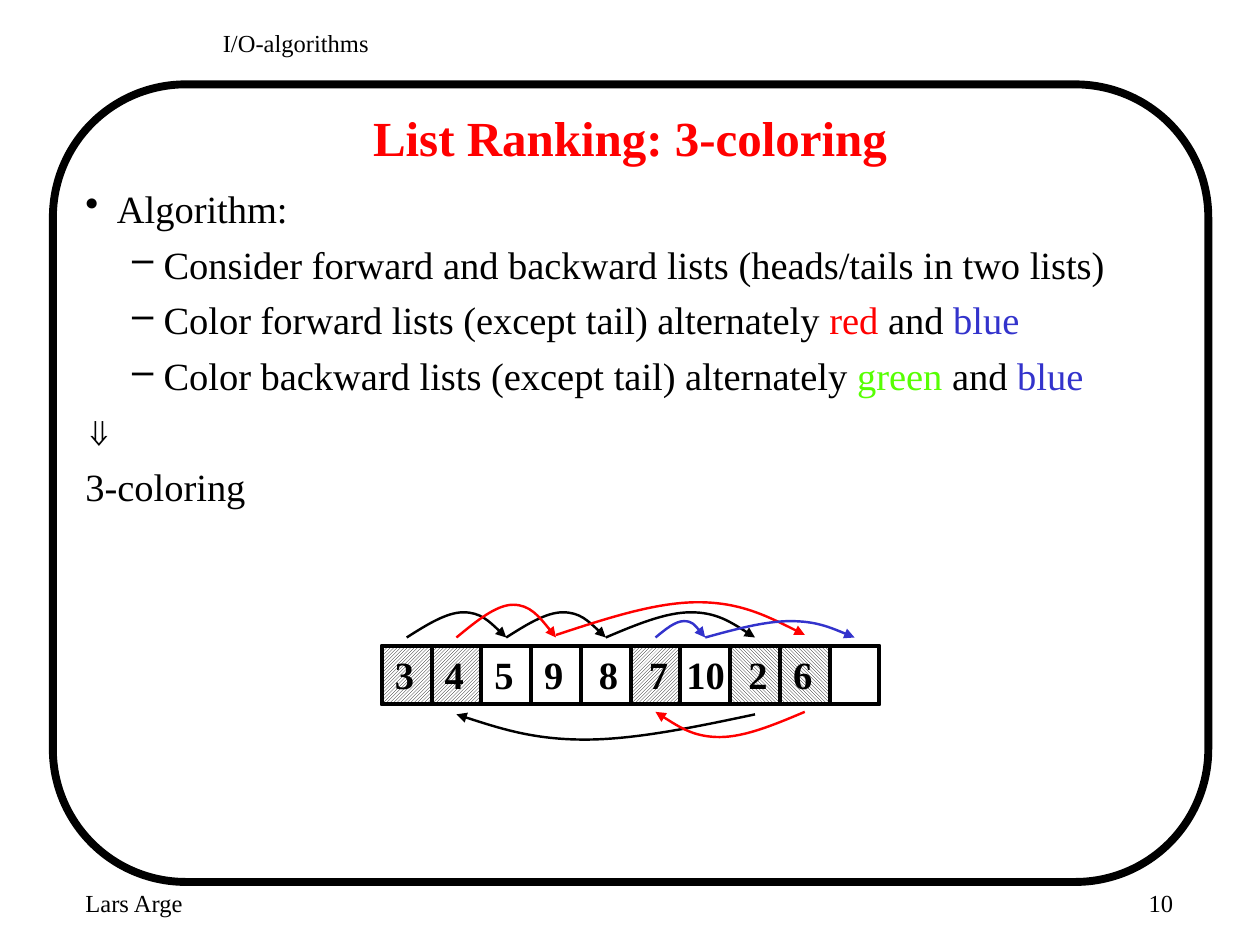
"""Build the slide on 3-coloring for list ranking."""
import lxml.etree
import pptx
import pptx.util
import pptx.dml.color
import pptx.enum.dml
import pptx.enum.shapes
import pptx.enum.text
import pptx.oxml.ns

COLORS = {"black": "000000", "white": "FFFFFF", "red": "FF0000", "blue": "3333CC", "green": "57FF03"}
FONT = "Times New Roman"
WIDTH, HEIGHT = 10, 7.5

ALIGN = pptx.enum.text.PP_ALIGN
PATTERN = pptx.enum.dml.MSO_PATTERN
SHAPE = pptx.enum.shapes.MSO_SHAPE
UP, DOWN = PATTERN.LIGHT_UPWARD_DIAGONAL, PATTERN.LIGHT_DOWNWARD_DIAGONAL

TITLE = "List Ranking: 3-coloring"
MARGINALS = [
    ("Lars Arge", (0.58, 7, 2.08, 0.5), ALIGN.LEFT),
    ("I/O-algorithms", (1.67, 0.17, 6.58, 0.42), ALIGN.LEFT),
    ("10", (7.33, 7, 2.08, 0.5), ALIGN.RIGHT),
]
BODY = [
    (0, "•", [("Algorithm:", "black")]),
    (1, "–", [("Consider forward and backward lists (heads/tails in two lists)", "black")]),
    (1, "–", [("Color forward lists (except tail) alternately ", "black"), ("red", "red"),
              (" and ", "black"), ("blue", "blue")]),
    (1, "–", [("Color backward lists (except tail) alternately ", "black"), ("green", "green"),
              (" and ", "black"), ("blue", "blue")]),
    (0, None, [("⇓", "black")]),
    (0, None, [("3-coloring", "black")]),
]
INDENTS = [0.25, 0.62]

# label, hatch, text centre measured from the left of its cell
CELLS = [
    ("3", UP, 0.18), ("4", UP, 0.18), ("5", None, 0.18), ("9", None, 0.18), ("8", None, 0.22),
    ("7", UP, 0.22), ("10", None, 0.2), ("2", DOWN, 0.22), ("6", DOWN, 0.18), ("", None, 0.2),
]
LEFT, TOP, COL, ROW = 3.03, 5.13, 0.395, 0.46

# from cell, to cell, base line, rise, colour
ARCS = [
    (0, 2, 5.06, -0.2, "black"), (2, 4, 5.06, -0.2, "black"), (1, 3, 5.06, -0.26, "red"),
    (4, 7, 5.06, -0.2, "black"), (3, 8, 5.04, -0.26, "red"), (7, 1, 5.67, 0.2, "black"),
    (8, 5, 5.65, 0.2, "red"), (5, 6, 5.06, -0.13, "blue"), (6, 9, 5.06, -0.13, "blue"),
]
CURVE = [(0.2, 0.5), (0.4, 1), (0.57, 1), (0.74, 1), (0.87, 0.5), (1, 0)]


def rgb(name):
    return pptx.dml.color.RGBColor.from_string(COLORS[name])


def inches(*values):
    return [pptx.util.Inches(v) for v in values]


def add_run(p, text, size, color="black", bold=False):
    r = p.add_run()
    r.text = text
    r.font.name, r.font.size, r.font.bold = FONT, pptx.util.Pt(size), bold
    r.font.color.rgb = rgb(color)


def add_box(s, at, wrap=True):
    tf = s.shapes.add_textbox(*inches(*at)).text_frame
    tf.word_wrap = wrap
    return tf


def add_label(s, text, at, align, size, color="black", bold=False, wrap=True):
    tf = add_box(s, at, wrap)
    p = tf.paragraphs[0]
    p.alignment = align
    add_run(p, text, size, color, bold)
    return tf


def add_outline(s, kind, at, width, hatch=None):
    sp = s.shapes.add_shape(kind, *inches(*at))
    sp.shadow.inherit = False
    sp.line.color.rgb, sp.line.width = rgb("black"), pptx.util.Pt(width)
    if hatch is None:
        sp.fill.background()
    else:
        sp.fill.patterned()
        sp.fill.pattern = hatch
        sp.fill.fore_color.rgb, sp.fill.back_color.rgb = rgb("black"), rgb("white")
    return sp


def add_body(s):
    tf = add_box(s, (0.58, 1.42, 9.07, 5.42))
    for i, (level, bullet, runs) in enumerate(BODY):
        p = tf.add_paragraph() if i else tf.paragraphs[0]
        p.level, p.space_before = level, pptx.util.Pt(5.4)
        pPr = p._p.get_or_add_pPr()
        pPr.set("marL", str(pptx.util.Inches(INDENTS[level])))
        pPr.set("indent", str(pptx.util.Inches(-0.25)))
        tag = "a:buChar" if bullet else "a:buNone"
        bu = lxml.etree.SubElement(pPr, pptx.oxml.ns.qn(tag))
        if bullet:
            bu.set("char", bullet)
        for text, color in runs:
            add_run(p, text, 22, color)


def add_divider(s, col, box):
    x = LEFT + col * COL
    line = s.shapes.add_connector(pptx.enum.shapes.MSO_CONNECTOR.STRAIGHT,
                                  *inches(x, TOP, x, TOP + ROW))
    line.line.color.rgb, line.line.width = rgb("black"), pptx.util.Pt(2.25)
    lxml.etree.SubElement(line._element.spPr, pptx.oxml.ns.qn("a:effectLst"))
    if 2 * col == len(CELLS):
        line.begin_connect(box, 0)
        line.end_connect(box, 2)


def add_array(s):
    for i, (_, hatch, _) in enumerate(CELLS):
        add_outline(s, SHAPE.RECTANGLE, (LEFT + i * COL, TOP, COL, ROW), 2.25, hatch)
    box = add_outline(s, SHAPE.RECTANGLE, (LEFT, TOP, len(CELLS) * COL, ROW), 2.25)
    for col in range(1, len(CELLS)):
        add_divider(s, col, box)
    for i, (text, _, middle) in enumerate(CELLS):
        if text:
            w = 0.35 if len(text) == 1 else 0.51
            at = (LEFT + i * COL + middle - w / 2, TOP - 0.01, w, 0.47)
            add_label(s, text, at, ALIGN.CENTER, 22, bold=True, wrap=False)


def add_arc(s, start, end, base, rise, color):
    x, span = LEFT + (start + 0.5) * COL, (end - start) * COL
    fb = s.shapes.build_freeform(*inches(x, base))
    fb.add_line_segments([inches(x + u * span, base + v * rise) for u, v in CURVE], close=False)
    sp = fb.convert_to_shape()
    sp.shadow.inherit = False
    sp.fill.background()
    sp.line.color.rgb, sp.line.width = rgb(color), pptx.util.Pt(1.38)
    tail = lxml.etree.SubElement(sp.line._get_or_add_ln(), pptx.oxml.ns.qn("a:tailEnd"))
    tail.set("type", "triangle")
    steps = list(sp._element.iter(pptx.oxml.ns.qn("a:lnTo")))
    outline = steps[0].getparent()
    for i in range(0, len(steps), 3):
        bezier = lxml.etree.SubElement(outline, pptx.oxml.ns.qn("a:cubicBezTo"))
        for step in steps[i:i + 3]:
            bezier.append(step[0])
            outline.remove(step)


def main():
    prs = pptx.Presentation()
    prs.slide_width, prs.slide_height = inches(WIDTH, HEIGHT)
    s = prs.slides.add_slide(prs.slide_layouts[6])
    add_outline(s, SHAPE.FLOWCHART_ALTERNATE_PROCESS, (0.42, 0.67, 9.17, 6.33), 4.5)
    for text, at, align in MARGINALS:
        add_label(s, text, at, align, 14)
    tf = add_label(s, TITLE, (0.75, 0.75, 8.5, 0.67), ALIGN.CENTER, 28, "red", True)
    tf.vertical_anchor = pptx.enum.text.MSO_ANCHOR.MIDDLE
    add_body(s)
    add_array(s)
    for arc in ARCS:
        add_arc(s, *arc)
    prs.save("out.pptx")


if __name__ == "__main__":
    main()
